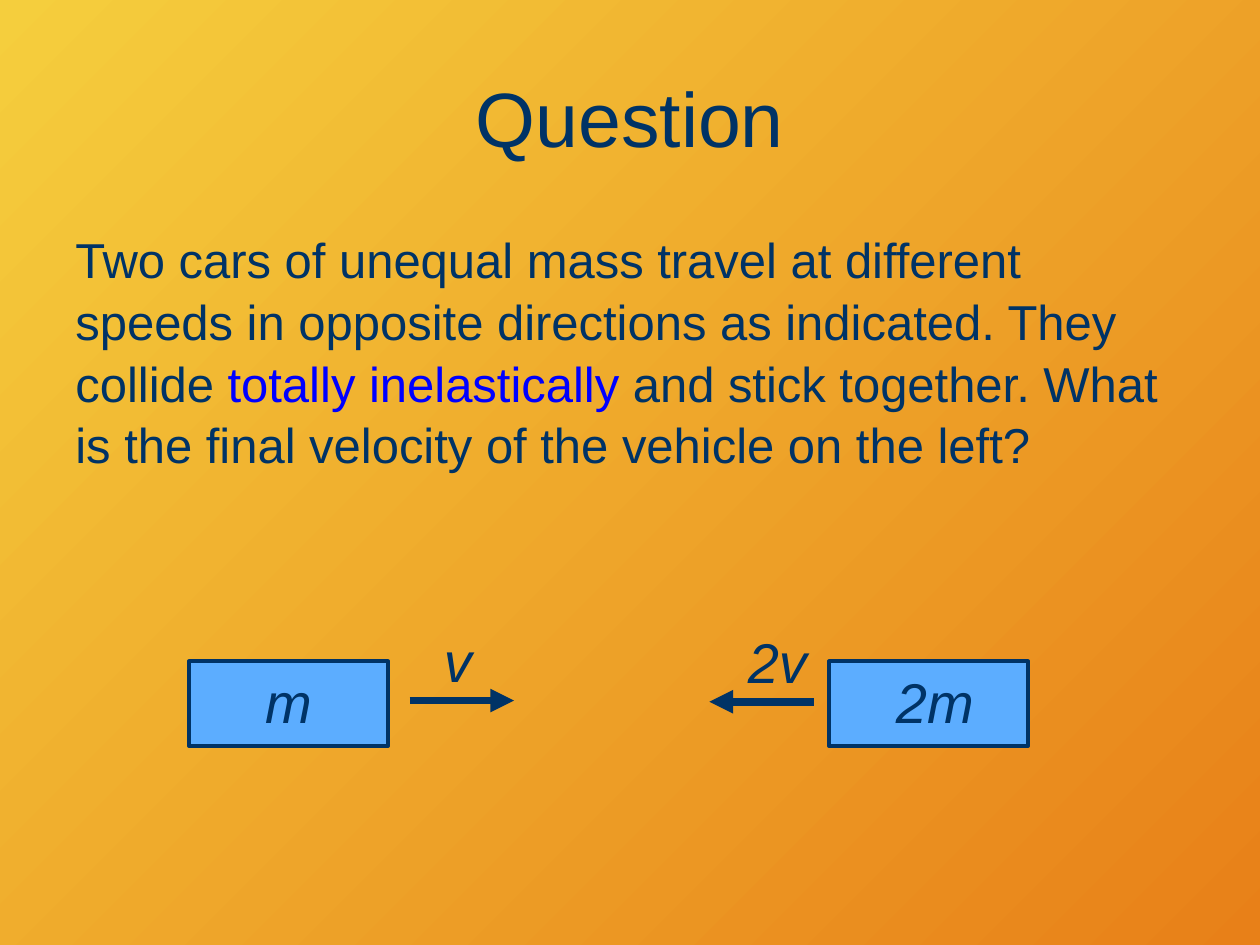
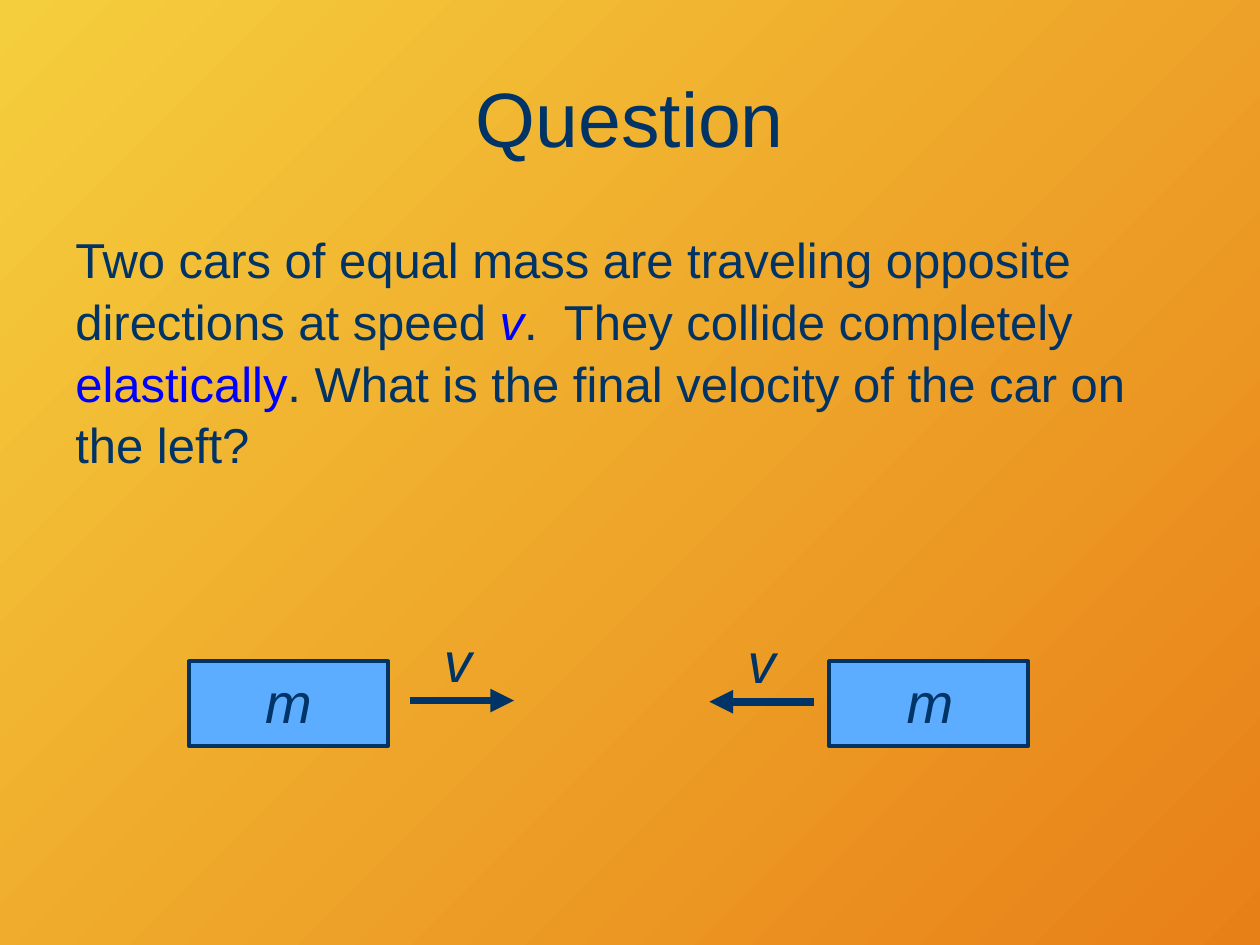
from dataclasses import dataclass

from lxml import etree
from pptx import Presentation
from pptx import util as u
from pptx.dml.color import RGBColor
from pptx.enum import shapes, text
from pptx.oxml.ns import qn

PX = u.Inches(1) // 100  # 100 px to the inch


@dataclass(frozen=True)
class Theme:
    font: str = "Arial"
    ink: str = "003366"
    accent: str = "0000FF"
    car: str = "5CADFF"
    gradient: tuple = ("F5CE3D", "E88018")
    title_size: int = 44
    body_size: int = 28
    label_size: int = 32
    car_line: float = 2.25
    arrow_line: float = 4.5


def px(*lengths):
    return [length * PX for length in lengths]


class Deck:
    def __init__(self, theme):
        self.theme = theme
        self.presentation = Presentation()
        self.presentation.slide_width, self.presentation.slide_height = px(1000, 750)
        self.slide = None
        self.paint_background()

    def paint_background(self):
        fill = self.presentation.slide_master.background.fill
        fill.gradient()
        fill.gradient_angle = 315  # counter-clockwise: top left to bottom right
        for stop, color in zip(fill.gradient_stops, self.theme.gradient):
            stop.color.rgb = RGBColor.from_string(color)

    def format_run(self, run, size, color=None, italic=False):
        run.font.name = self.theme.font
        run.font.size = u.Pt(size)
        run.font.italic = italic
        run.font.color.rgb = RGBColor.from_string(color or self.theme.ink)

    def format_line(self, line, width):
        line.color.rgb = RGBColor.from_string(self.theme.ink)
        line.width = u.Pt(width)

    def add_slide(self, title):
        self.slide = self.presentation.slides.add_slide(self.presentation.slide_layouts[5])
        shape = self.slide.shapes.title
        shape.left, shape.top, shape.width, shape.height = px(50, 30, 900, 125)
        frame = shape.text_frame
        frame.text = title
        frame.auto_size = text.MSO_AUTO_SIZE.NONE
        frame.vertical_anchor = text.MSO_ANCHOR.MIDDLE
        frame.paragraphs[0].alignment = text.PP_ALIGN.CENTER
        self.format_run(frame.paragraphs[0].runs[0], self.theme.title_size)

    def body(self, pieces):
        """Write one paragraph from (text, color, italic) pieces."""
        frame = self.slide.shapes.add_textbox(*px(50, 175, 900, 208)).text_frame
        frame.word_wrap = True
        paragraph = frame.paragraphs[0]
        paragraph.line_spacing = 1.05
        for words, color, italic in pieces:
            run = paragraph.add_run()
            run.text = words
            self.format_run(run, self.theme.body_size, color, italic)

    def label(self, group, words, left, top, width):
        frame = group.shapes.add_textbox(*px(left, top, width, 64)).text_frame
        frame.text = words
        frame.word_wrap = False
        frame.auto_size = text.MSO_AUTO_SIZE.SHAPE_TO_FIT_TEXT
        frame.paragraphs[0].alignment = text.PP_ALIGN.CENTER
        self.format_run(frame.paragraphs[0].runs[0], self.theme.label_size, italic=True)

    def car(self, left, mass, label_left, label_width):
        group = self.slide.shapes.add_group_shape()
        box = group.shapes.add_shape(shapes.MSO_SHAPE.RECTANGLE, *px(left, 525, 158, 67))
        box.shadow.inherit = False
        box.fill.solid()
        box.fill.fore_color.rgb = RGBColor.from_string(self.theme.car)
        self.format_line(box.line, self.theme.car_line)
        self.label(group, mass, label_left, 525, label_width)

    def velocity(self, start, end, y, speed, label_left, label_width):
        group = self.slide.shapes.add_group_shape()
        arrow = group.shapes.add_connector(
            shapes.MSO_CONNECTOR.STRAIGHT, *px(start, y, end, y))
        self.format_line(arrow.line, self.theme.arrow_line)
        properties = arrow.element.spPr
        etree.SubElement(properties.find(qn("a:ln")), qn("a:tailEnd"), type="triangle")
        etree.SubElement(properties, qn("a:effectLst"))
        self.label(group, speed, label_left, y - 64, label_width)

    def question(self, pieces, right_mass, right_speed):
        """Add a collision question; each right label is (text, left, width)."""
        self.add_slide("Question")
        self.body(pieces)
        self.car(150, "m", 200, 58)
        self.car(658, *right_mass)
        self.velocity(646, 563, 557, *right_speed)
        self.velocity(325, 408, 556, "v", 342, 43)


def main():
    theme = Theme()
    deck = Deck(theme)
    deck.question(
        [
            ("Two cars of unequal mass travel at different speeds in opposite "
             "directions as indicated. They collide ", theme.ink, False),
            ("totally inelastically", theme.accent, False),
            (" and stick together. What is the final velocity of the vehicle "
             "on the left?", theme.ink, False),
        ],
        right_mass=("2m", 701, 82),
        right_speed=("2v", 583, 68),
    )
    deck.question(
        [
            ("Two cars of equal mass are traveling opposite directions at speed ",
             theme.ink, False),
            ("v", theme.accent, True),
            (".  They collide completely ", theme.ink, False),
            ("elastically", theme.accent, False),
            (". What is the final velocity of the car on the left?", theme.ink, False),
        ],
        right_mass=("m", 709, 58),
        right_speed=("v", 583, 43),
    )
    deck.presentation.save("out.pptx")


if __name__ == "__main__":
    main()
